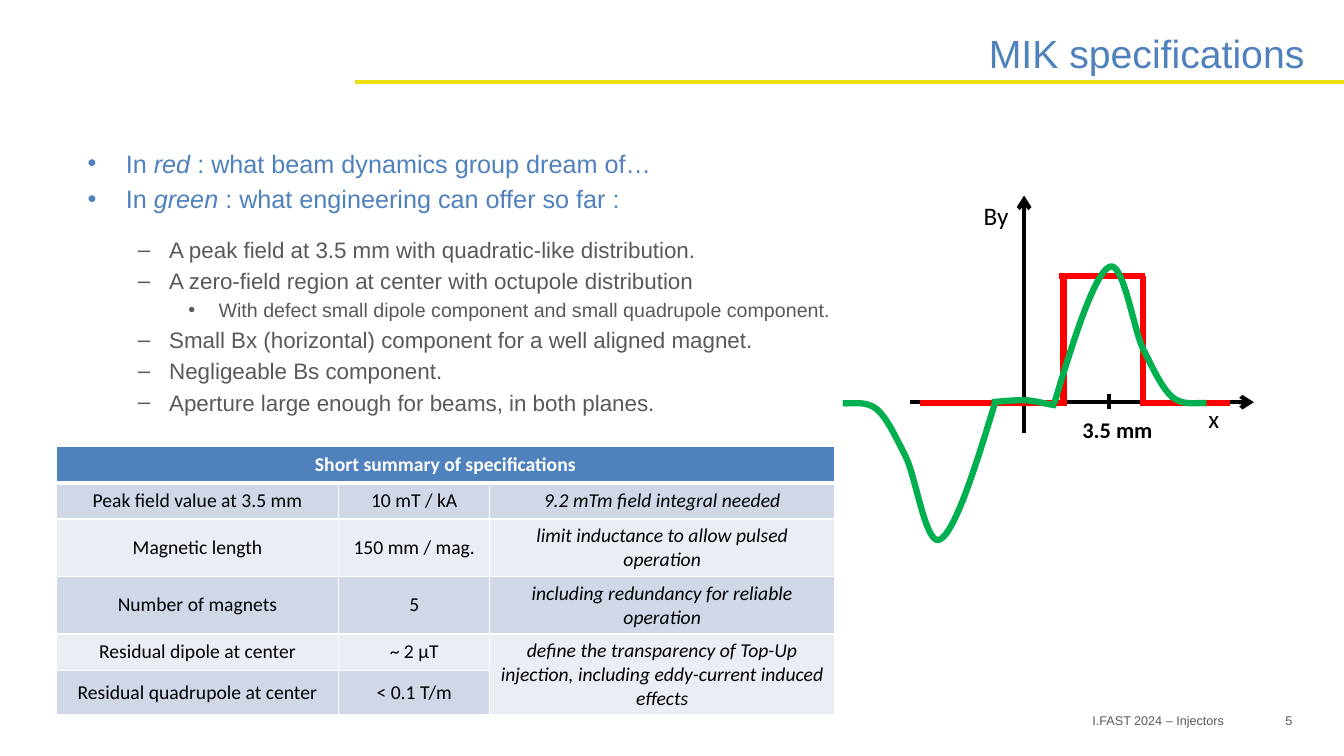
from lxml import etree
from pptx import Presentation
from pptx.dml.color import RGBColor
from pptx.enum.shapes import MSO_CONNECTOR
from pptx.enum.text import MSO_ANCHOR, MSO_AUTO_SIZE, PP_ALIGN
from pptx.oxml.ns import qn
from pptx.util import Pt

LEFT, CENTER, RIGHT = PP_ALIGN.LEFT, PP_ALIGN.CENTER, PP_ALIGN.RIGHT
TOP, MIDDLE = MSO_ANCHOR.TOP, MSO_ANCHOR.MIDDLE
FIXED = MSO_AUTO_SIZE.NONE
STRAIGHT = MSO_CONNECTOR.STRAIGHT

BLUE = RGBColor(0x4F, 0x81, 0xBD)
GRAY = RGBColor(0x59, 0x59, 0x59)
GOLD = RGBColor(0xEE, 0xDE, 0x12)
RED = RGBColor(0xFF, 0x00, 0x00)
GREEN = RGBColor(0x00, 0xB0, 0x50)
BLACK = RGBColor(0x00, 0x00, 0x00)
WHITE = RGBColor(0xFF, 0xFF, 0xFF)
BAND = RGBColor(0xD0, 0xD8, 0xE8)
PALE = RGBColor(0xE9, 0xED, 0xF4)

PX = 9144  # EMU per px, 100 px to the inch

# Level: size, colour, bullet, left margin, hanging indent
LEVELS = [
    (18, BLUE, "•", 38, 38),
    (16, GRAY, "–", 81, 31),
    (14, GRAY, "•", 130, 30),
]
# Level and pieces of text; every second piece is italic
POINTS = [
    (0, ["In ", "red", " : what beam dynamics group dream of…"]),
    (0, ["In ", "green", " : what engineering can offer so far :"]),
    (1, ["A peak field at 3.5 mm with quadratic-like distribution."]),
    (1, ["A zero-field region at center with octupole distribution"]),
    (2, ["With defect small dipole component and small quadrupole component."]),
    (1, ["Small Bx (horizontal) component for a well aligned magnet."]),
    (1, ["Negligeable Bs component."]),
    (1, ["Aperture large enough for beams, in both planes."]),
]

COLS = [280, 150, 342]
ROWS = [36, 36, 57, 57, 36, 36]
SPECS = [
    ("Short summary of specifications", "", ""),
    ("Peak field value at 3.5 mm", "10 mT / kA", "9.2 mTm field integral needed"),
    ("Magnetic length", "150 mm / mag.", "limit inductance to allow pulsed operation"),
    ("Number of magnets", "5", "including redundancy for reliable operation"),
    ("Residual dipole at center", "~ 2 µT",
     "define the transparency of Top-Up injection, "
     "including eddy-current induced effects"),
    ("Residual quadrupole at center", "< 0.1 T/m", ""),
]

# Bézier points of the field curve: a start, then three for each piece
PEAK = [(1046, 400), (1065, 337), (1085, 274), (1100, 265),
        (1114, 256), (1124, 325), (1134, 346),
        (1145, 368), (1153, 385), (1163, 394),
        (1174, 403), (1188, 399), (1197, 400)]
DIP = [(2033 - x, 800 - y) for x, y in PEAK]
FLAT = [(984, 399), (995, 398), (1005, 397), (1016, 397),
        (1026, 397), (1042, 402), (1048, 402)]


def set_font(font, size, color, name="Arial"):
    font.name, font.size = name, Pt(size)
    font.color.rgb = color


def add_text(slide, text, box, size, color, name="Arial", align=LEFT,
             anchor=TOP, wrap=True, bold=False):
    frame = slide.shapes.add_textbox(*[v * PX for v in box]).text_frame
    frame.word_wrap = wrap
    frame.vertical_anchor = anchor
    para = frame.paragraphs[0]
    para.text, para.alignment = text, align
    set_font(para.font, size, color, name)
    para.font.bold = bold


def add_line(slide, x1, y1, x2, y2, color, width, arrow=False):
    line = slide.shapes.add_connector(STRAIGHT, x1 * PX, y1 * PX, x2 * PX, y2 * PX)
    line.line.color.rgb = color
    line.line.width = Pt(width)
    props = line._element.spPr
    if arrow:
        etree.SubElement(props.find(qn("a:ln")), qn("a:tailEnd"), type="arrow")
    etree.SubElement(props, qn("a:effectLst"))


def add_curve(slide, nodes, color, width):
    knots = nodes[::3]
    pen = slide.shapes.build_freeform(*knots[0], scale=PX)
    pen.add_line_segments(knots[1:], close=False)
    curve = pen.convert_to_shape()
    curve.fill.background()
    curve.line.color.rgb = color
    curve.line.width = Pt(width)
    curve.shadow.inherit = False
    # Bend each segment with its two control points
    left, top = (min(axis) for axis in zip(*knots))
    for i, seg in enumerate(list(curve._element.iter(qn("a:lnTo")))):
        seg.tag = qn("a:cubicBezTo")
        for k, (x, y) in enumerate(nodes[3 * i + 1:3 * i + 3]):
            seg.insert(k, seg.makeelement(
                qn("a:pt"), {"x": str(x - left), "y": str(y - top)}))


def add_title(slide, text):
    title = slide.shapes.title
    title.left, title.top, title.width, title.height = [
        v * PX for v in (247, 21, 1057, 62)]
    frame = title.text_frame
    frame.auto_size = FIXED
    frame.vertical_anchor = MIDDLE
    para = frame.paragraphs[0]
    para.text, para.alignment = text, RIGHT
    set_font(para.font, 28, BLUE)


def add_points(slide):
    frame = slide.shapes.add_textbox(77 * PX, 142 * PX, 771 * PX, 531 * PX).text_frame
    frame.word_wrap = True
    last = None
    for level, pieces in POINTS:
        size, color, mark, margin, hang = LEVELS[level]
        para = frame.paragraphs[0] if last is None else frame.add_paragraph()
        props = para._p.get_or_add_pPr()
        props.set("marL", str(margin * PX))
        props.set("indent", str(-hang * PX))
        etree.SubElement(props, qn("a:buFont"), typeface="Arial")
        etree.SubElement(props, qn("a:buChar"), char=mark)
        para.level = level
        if last is not None:
            # The first dash item stands further off
            para.space_before = Pt(16 if (last, level) == (0, 1) else size / 5)
        set_font(para.font, size, color)
        for i, piece in enumerate(pieces):
            run = para.add_run()
            run.text = piece
            if i % 2:
                run.font.italic = True
        last = level


def set_edges(cell, head):
    props = cell._tc.get_or_add_tcPr()
    for side in "LRTB":
        width = Pt(3 if head and side == "B" else 1)
        edge = etree.SubElement(props, qn("a:ln" + side), w=str(width))
        fill = etree.SubElement(edge, qn("a:solidFill"))
        etree.SubElement(fill, qn("a:srgbClr"), val=str(WHITE))


def add_specs(slide):
    table = slide.shapes.add_table(
        len(ROWS), len(COLS), 56 * PX, 443 * PX, sum(COLS) * PX, sum(ROWS) * PX).table
    for col, width in zip(table.columns, COLS):
        col.width = width * PX
    for row, height in zip(table.rows, ROWS):
        row.height = height * PX
    table.cell(0, 0).merge(table.cell(0, 2))
    table.cell(4, 2).merge(table.cell(5, 2))
    for r, texts in enumerate(SPECS):
        head = r == 0
        for c, text in enumerate(texts):
            cell = table.cell(r, c)
            set_edges(cell, head)
            cell.fill.solid()
            cell.fill.fore_color.rgb = BLUE if head else BAND if r % 2 else PALE
            cell.vertical_anchor = MIDDLE
            para = cell.text_frame.paragraphs[0]
            para.text, para.alignment = text, CENTER
            set_font(para.font, 14, WHITE if head else BLACK, "Calibri")
            para.font.bold = head
            para.font.italic = c == 2


def add_plot(slide):
    # Axes and labels
    add_line(slide, 1016, 430, 1016, 194, BLACK, 3, arrow=True)
    add_line(slide, 903, 399, 1244, 399, BLACK, 3, arrow=True)
    add_line(slide, 1100, 391, 1100, 406, BLACK, 3)
    add_text(slide, "By", (966, 194, 45, 40), 18, BLACK, "Calibri", wrap=False)
    add_text(slide, "x", (1189, 395, 31, 40), 18, BLACK, "Calibri", wrap=False)
    add_text(slide, "3.5 mm", (1064, 408, 115, 37), 16, BLACK, "Calibri", bold=True)
    # Wished field
    for ends in [(913, 400, 1055, 400), (1134, 400, 1220, 400),
                 (1134, 403, 1134, 274), (1055, 403, 1055, 274),
                 (1051, 274, 1136, 274)]:
        add_line(slide, *ends, RED, 4.5)
    # Feasible field
    for nodes in (PEAK, DIP, FLAT):
        add_curve(slide, nodes, GREEN, 4.5)


def main():
    deck = Presentation()
    deck.slide_width, deck.slide_height = Pt(960), Pt(540)
    slide = deck.slides.add_slide(deck.slide_layouts[5])
    # Frame of the slide
    add_text(slide, "I.FAST 2024 – Injectors", (253, 695, 971, 40), 9, GRAY,
             align=RIGHT, anchor=MIDDLE)
    add_text(slide, "5", (1223, 695, 69, 40), 9, GRAY, align=RIGHT, anchor=MIDDLE)
    add_line(slide, 1333, 81, 352, 81, GOLD, 3)
    add_title(slide, "MIK specifications")
    # Content
    add_points(slide)
    add_plot(slide)
    add_specs(slide)
    deck.save("out.pptx")


if __name__ == "__main__":
    main()
